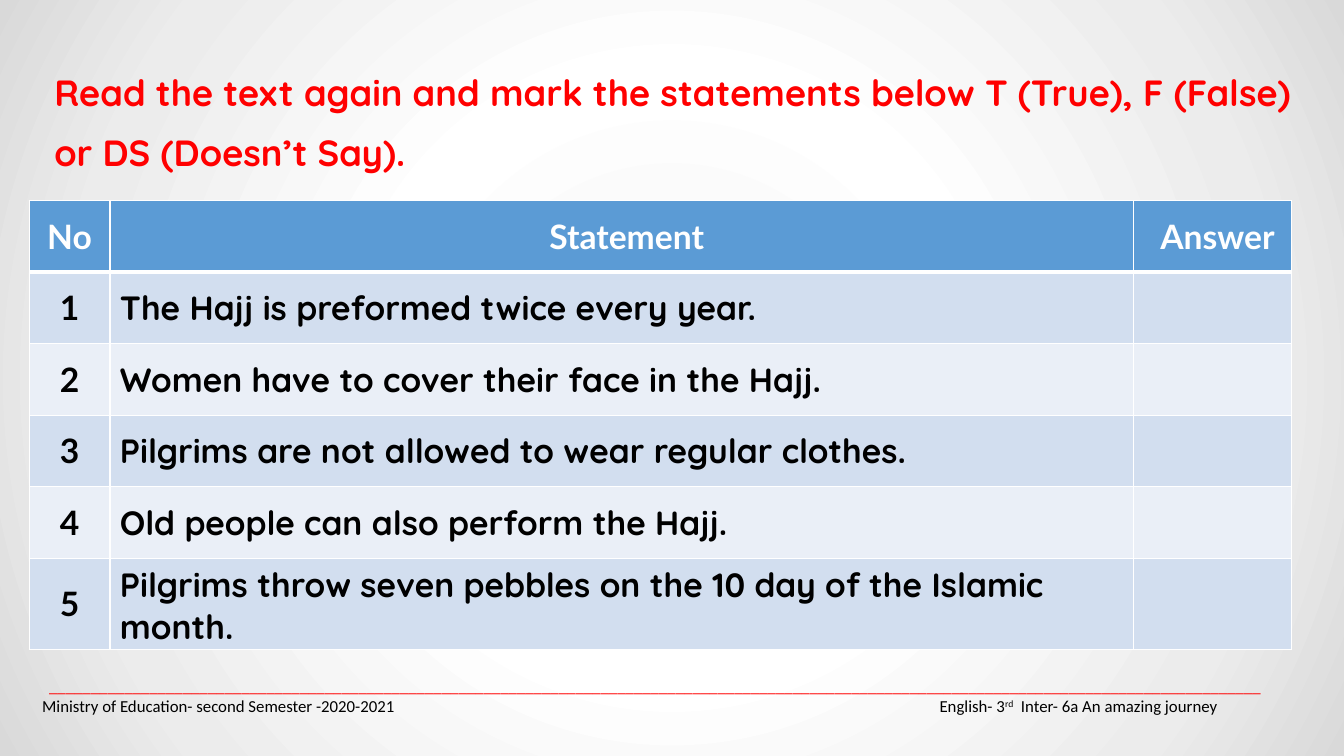
"""Builds a true / false / doesn't say exercise slide with an answer table."""
from pptx import Presentation
from pptx.dml.color import RGBColor
from pptx.enum.text import MSO_ANCHOR, PP_ALIGN
from pptx.oxml import parse_xml
from pptx.oxml.ns import nsdecls
from pptx.util import Inches, Pt

TITLE = "Read the text again and mark the statements below T (True), F (False) or DS (Doesn’t Say)."
HEADERS = ["No", "Statement", "Answer"]
STATEMENTS = [
    "The Hajj is preformed twice every year.",
    "Women have to cover their face in the Hajj.",
    "Pilgrims are not allowed to wear regular clothes.",
    "Old people can also perform the Hajj.",
    "Pilgrims throw seven pebbles on the 10 day of the Islamic month.",
]
FOOTER_RULE = "_" * 145
FOOTERS = [
    (0.32, 4.5, [("Ministry of Education- second Semester -2020-2021", 0)]),
    (9.22, 3.5, [("English- 3", 0), ("rd", 30000), ("  Inter- 6a An amazing journey", 0)]),
]
BACKGROUND = [(0, "F2F2F2"), (39, "FFFFFF"), (78, "ECECEC"), (100, "D9D9D9")]
COLUMNS = [0.8, 10.15, 1.57]
ROW, LAST_ROW = 0.71, 0.89
HEAD_FILL, BANDS = "5B9BD5", ["D2DEEF", "EAEFF7"]
WHITE, BLACK, RED = "FFFFFF", "000000", "FF0000"


def color(value):
    return RGBColor.from_string(value)


def add_run(p, text, font, size, value, bold=False):
    r = p.add_run()
    r.text = text
    r.font.name, r.font.size, r.font.bold = font, Pt(size), bold
    r.font.color.rgb = color(value)
    return r


def add_text(s, left, top, width, height):
    tf = s.shapes.add_textbox(*map(Inches, (left, top, width, height))).text_frame
    tf.word_wrap = True
    return tf


def set_background(s):
    stops = "".join(f'<a:gs pos="{at * 1000}"><a:srgbClr val="{value}"/></a:gs>'
                    for at, value in BACKGROUND)
    bg = parse_xml(
        f'<p:bg {nsdecls("p", "a")}><p:bgPr><a:gradFill rotWithShape="1"><a:gsLst>{stops}</a:gsLst>'
        '<a:path path="circle"><a:fillToRect l="50000" t="50000" r="50000" b="50000"/></a:path>'
        '</a:gradFill><a:effectLst/></p:bgPr></p:bg>')
    s.element.cSld.insert(0, bg)


def set_borders(cell, bottom):
    tcPr = cell._tc.get_or_add_tcPr()
    for i, (side, width) in enumerate([("L", 1), ("R", 1), ("T", 1), ("B", bottom)]):
        tcPr.insert(i, parse_xml(
            f'<a:ln{side} {nsdecls("a")} w="{Pt(width)}"><a:solidFill>'
            f'<a:srgbClr val="{WHITE}"/></a:solidFill></a:ln{side}>'))


def add_answers(s):
    rows = [HEADERS] + [[str(n), text, ""] for n, text in enumerate(STATEMENTS, 1)]
    heights = [ROW] * len(STATEMENTS) + [LAST_ROW]
    table = s.shapes.add_table(len(rows), len(COLUMNS), Inches(0.29), Inches(1.99),
                               Inches(sum(COLUMNS)), Inches(sum(heights))).table
    for column, width in zip(table.columns, COLUMNS):
        column.width = Inches(width)
    for i, (row, height) in enumerate(zip(rows, heights)):
        table.rows[i].height = Inches(height)
        for j, text in enumerate(row):
            cell = table.cell(i, j)
            cell.vertical_anchor = MSO_ANCHOR.MIDDLE
            cell.margin_left = Inches(0.2 if i == 0 and j else 0.1)
            cell.fill.solid()
            cell.fill.fore_color.rgb = color(BANDS[(i - 1) % 2] if i else HEAD_FILL)
            set_borders(cell, 1 if i else 3)
            if text:
                is_statement = i > 0 and j == 1
                p = cell.text_frame.paragraphs[0]
                p.alignment = PP_ALIGN.LEFT if is_statement else PP_ALIGN.CENTER
                add_run(p, text, "Quicksand" if is_statement else "Lato", 24,
                        BLACK if i else WHITE, True)


def add_footer(s):
    p = add_text(s, 0.32, 6.65, 12.37, 0.3).paragraphs[0]
    p.alignment = PP_ALIGN.CENTER
    add_run(p, FOOTER_RULE, "Calibri", 12, RED)
    for left, width, runs in FOOTERS:
        tf = add_text(s, left, 6.85, width, 0.3)
        tf.vertical_anchor = MSO_ANCHOR.MIDDLE
        for text, baseline in runs:
            r = add_run(tf.paragraphs[0], text, "Calibri", 12, BLACK)
            if baseline:
                r.font._element.set("baseline", str(baseline))


def main():
    prs = Presentation()
    prs.slide_width, prs.slide_height = Inches(13.33), Inches(7.5)
    s = prs.slides.add_slide(prs.slide_layouts[6])
    set_background(s)
    p = add_text(s, 0.44, 0.48, 12.59, 1.24).paragraphs[0]
    p.line_spacing = Pt(43.2)
    add_run(p, TITLE, "Quicksand", 26, RED, True)
    add_answers(s)
    add_footer(s)
    prs.save("out.pptx")


if __name__ == "__main__":
    main()
